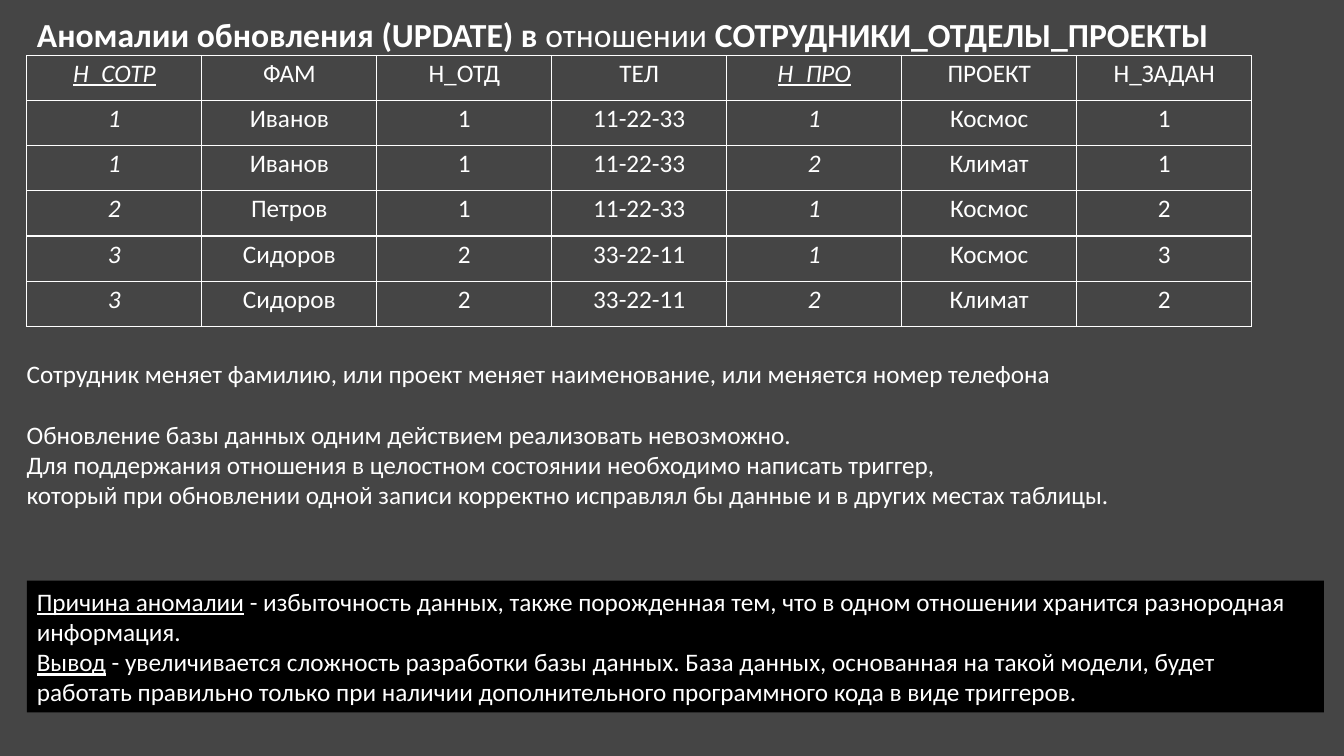
"""Build the slide on update anomalies in a relation of employees, departments and projects."""
from dataclasses import dataclass

from lxml import etree
from pptx import Presentation
from pptx import util as u
from pptx.dml.color import RGBColor
from pptx.enum import shapes, text
from pptx.oxml import ns


@dataclass(frozen=True)
class Theme:
    font: str = "Calibri"
    ink: str = "FFFFFF"
    backdrop: str = "454545"
    panel: str = "000000"
    title_size: int = 24
    text_size: int = 18
    gap: int = 22


theme = Theme()
deck = Presentation()
deck.slide_width, deck.slide_height = u.Inches(13.33), u.Inches(7.5)


def place(left, top, width, height):
    """Turn percentages of the slide into lengths."""
    across, down = deck.slide_width / 100, deck.slide_height / 100
    return [u.Emu(round(n)) for n in (left * across, top * down, width * across, height * down)]


def write(para, spans, size=theme.text_size, align=text.PP_ALIGN.LEFT):
    """Fill a paragraph with (wording, marks) spans; marks are b, i and u."""
    para.alignment = align
    para.font.name, para.font.size = theme.font, u.Pt(size)
    para.font.color.rgb = RGBColor.from_string(theme.ink)
    for wording, marks in spans:
        span = para.add_run()
        span.text = wording
        span.font.bold = "b" in marks
        span.font.italic = "i" in marks
        span.font.underline = "u" in marks


page = deck.slides.add_slide(deck.slide_layouts[5])
page.background.fill.solid()
page.background.fill.fore_color.rgb = RGBColor.from_string(theme.backdrop)

title = page.shapes.title
title.left, title.top, title.width, title.height = place(2, 1.75, 91.15, 11.3)
title.text_frame.auto_size = text.MSO_AUTO_SIZE.NONE
title.text_frame.vertical_anchor = text.MSO_ANCHOR.TOP
heading = title.text_frame.paragraphs[0]
heading.line_spacing = 0.9
write(heading, [
    ("Аномалии обновления (UPDATE) в", "b"),
    (" отношении ", ""),
    ("СОТРУДНИКИ_ОТДЕЛЫ_ПРОЕКТЫ", "b"),
], theme.title_size)

records = [
    ["Н_СОТР", "ФАМ", "Н_ОТД", "ТЕЛ", "Н_ПРО", "ПРОЕКТ", "Н_ЗАДАН"],
    ["1", "Иванов", "1", "11-22-33", "1", "Космос", "1"],
    ["1", "Иванов", "1", "11-22-33", "2", "Климат", "1"],
    ["2", "Петров", "1", "11-22-33", "1", "Космос", "2"],
    ["3", "Сидоров", "2", "33-22-11", "1", "Космос", "3"],
    ["3", "Сидоров", "2", "33-22-11", "2", "Климат", "2"],
]
key_columns = (0, 4)
table = page.shapes.add_table(
    len(records), len(records[0]), *place(2, 7.33, 91.15, 35.87)).table
table.first_row = table.horz_banding = False
for row, record in enumerate(records):
    for column, value in enumerate(record):
        cell = table.cell(row, column)
        cell.margin_left = cell.margin_right = u.Inches(0.03)
        cell.margin_top = cell.margin_bottom = u.Inches(0.03)
        marks = ("iu" if row == 0 else "i") if column in key_columns else ""
        write(cell.text_frame.paragraphs[0], [(value, marks)], align=text.PP_ALIGN.CENTER)
        borders = cell._tc.get_or_add_tcPr()
        for side in ("a:lnL", "a:lnR", "a:lnT", "a:lnB"):
            line = etree.SubElement(borders, ns.qn(side), w=str(u.Pt(1)))
            fill = etree.SubElement(line, ns.qn("a:solidFill"))
            etree.SubElement(fill, ns.qn("a:srgbClr"), val=theme.ink)
        cell.fill.background()

explanation = page.shapes.add_textbox(*place(1.25, 46.67, 97.95, 21.6))
panel = page.shapes.add_shape(shapes.MSO_SHAPE.RECTANGLE, *place(2, 76.8, 96.5, 17.45))
panel.shadow.inherit = False
panel.fill.solid()
panel.fill.fore_color.rgb = RGBColor.from_string(theme.panel)
panel.line.fill.background()

passages = [
    (explanation, [
        [("Сотрудник меняет фамилию, или проект меняет наименование, "
          "или меняется номер телефона", "")],
        [("Обновление базы данных одним действием реализовать невозможно.", "")],
        [("Для поддержания отношения в целостном состоянии необходимо написать триггер,", "")],
        [("который при обновлении одной записи корректно исправлял бы данные "
          "и в других местах таблицы.", "")],
    ]),
    (panel, [
        [("Причина аномалии", "u"),
         (" - избыточность данных, также порожденная тем, что в одном отношении "
          "хранится разнородная информация.", "")],
        [("Вывод", "u"),
         (" - увеличивается сложность разработки базы данных. База данных, основанная "
          "на такой модели, будет работать правильно только при наличии дополнительного "
          "программного кода в виде триггеров.", "")],
    ]),
]
for box, paragraphs in passages:
    frame = box.text_frame
    frame.word_wrap = True
    for index, spans in enumerate(paragraphs):
        write(frame.add_paragraph() if index else frame.paragraphs[0], spans)
explanation.text_frame.paragraphs[1].space_before = u.Pt(theme.gap)

deck.save("out.pptx")
